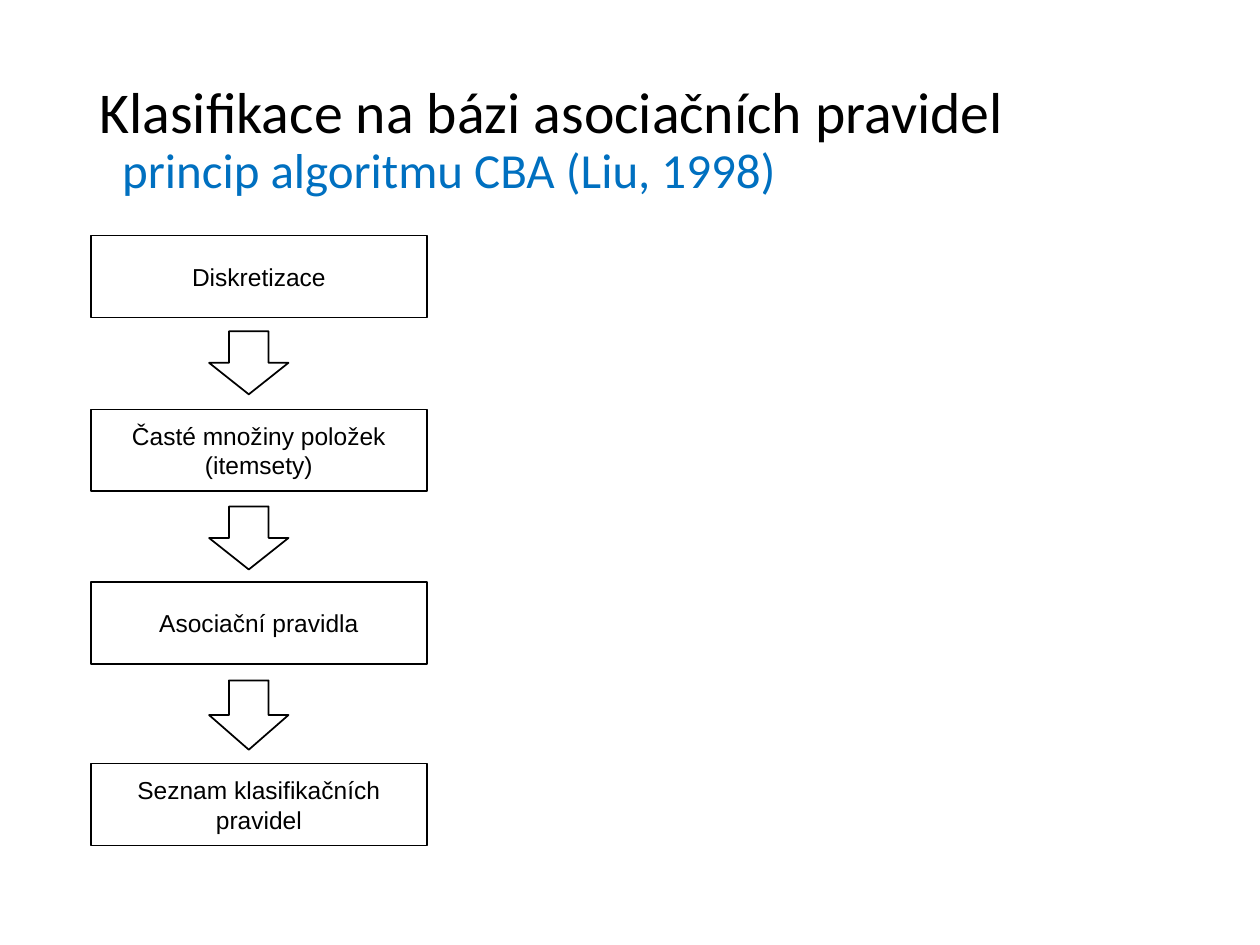
from dataclasses import dataclass

from pptx import Presentation
from pptx import util as u
from pptx.dml.color import RGBColor
from pptx.enum import shapes, text


@dataclass(frozen=True)
class Theme:
    ink: RGBColor = RGBColor(0x00, 0x00, 0x00)
    accent: RGBColor = RGBColor(0x00, 0x70, 0xC0)
    title_font: str = "Calibri"
    body_font: str = "Arial"
    title_size: int = 33
    subtitle_size: int = 28
    body_size: int = 14
    line_width: int = 1


class SlideBuilder:
    def __init__(self, slide, theme):
        self.slide = slide
        self.theme = theme

    def set_font(self, paragraph, name, size, color):
        paragraph.font.name = name
        paragraph.font.size = u.Pt(size)
        paragraph.font.color.rgb = color

    def title(self, heading, subtitle, left, top, width, height):
        shape = self.slide.shapes.title
        shape.left, shape.top = u.Inches(left), u.Inches(top)
        shape.width, shape.height = u.Inches(width), u.Inches(height)
        frame = shape.text_frame
        frame.text = f"{heading}\n{subtitle}"
        frame.auto_size = text.MSO_AUTO_SIZE.NONE
        frame.vertical_anchor = text.MSO_ANCHOR.MIDDLE
        styles = [(self.theme.title_size, self.theme.ink),
                  (self.theme.subtitle_size, self.theme.accent)]
        for paragraph, (size, color) in zip(frame.paragraphs, styles):
            paragraph.alignment = text.PP_ALIGN.LEFT
            paragraph.line_spacing = 0.9
            self.set_font(paragraph, self.theme.title_font, size, color)
        # Indent the subtitle under the heading
        properties = frame.paragraphs[1]._p.get_or_add_pPr()
        properties.set("marL", str(u.Inches(0.18)))

    def outline(self, kind, left, top, width, height):
        shape = self.slide.shapes.add_shape(
            kind, u.Inches(left), u.Inches(top), u.Inches(width), u.Inches(height))
        shape.shadow.inherit = False
        shape.fill.background()
        shape.line.color.rgb = self.theme.ink
        shape.line.width = u.Pt(self.theme.line_width)
        return shape

    def box(self, label, left, top, width, height):
        shape = self.outline(shapes.MSO_SHAPE.RECTANGLE, left, top, width, height)
        frame = shape.text_frame
        frame.word_wrap = True
        frame.vertical_anchor = text.MSO_ANCHOR.MIDDLE
        frame.text = label
        for paragraph in frame.paragraphs:
            paragraph.alignment = text.PP_ALIGN.CENTER
            self.set_font(paragraph, self.theme.body_font,
                          self.theme.body_size, self.theme.ink)

    def down_arrow(self, left, top, width, height):
        self.outline(shapes.MSO_SHAPE.DOWN_ARROW, left, top, width, height)


def main():
    presentation = Presentation()
    presentation.slide_width = u.Inches(10)
    presentation.slide_height = u.Inches(7.5)
    title_only = presentation.slide_layouts[5]
    builder = SlideBuilder(presentation.slides.add_slide(title_only), Theme())

    # Title
    builder.title("Klasifikace na bázi asociačních pravidel",
                  "princip algoritmu CBA (Liu, 1998)", 0.69, 0.4, 8.62, 1.45)

    # Steps of the algorithm: label and top
    steps = [
        ("Diskretizace", 1.87),
        ("Časté množiny položek\n(itemsety)", 3.25),
        ("Asociační pravidla", 4.62),
        ("Seznam klasifikačních pravidel", 6.06),
    ]
    for label, top in steps:
        builder.box(label, 0.72, top, 2.67, 0.65)

    # Arrows between the steps: top and height
    for top, height in [(2.63, 0.5), (4.02, 0.5), (5.4, 0.55)]:
        builder.down_arrow(1.66, top, 0.63, height)

    presentation.save("out.pptx")


if __name__ == "__main__":
    main()
